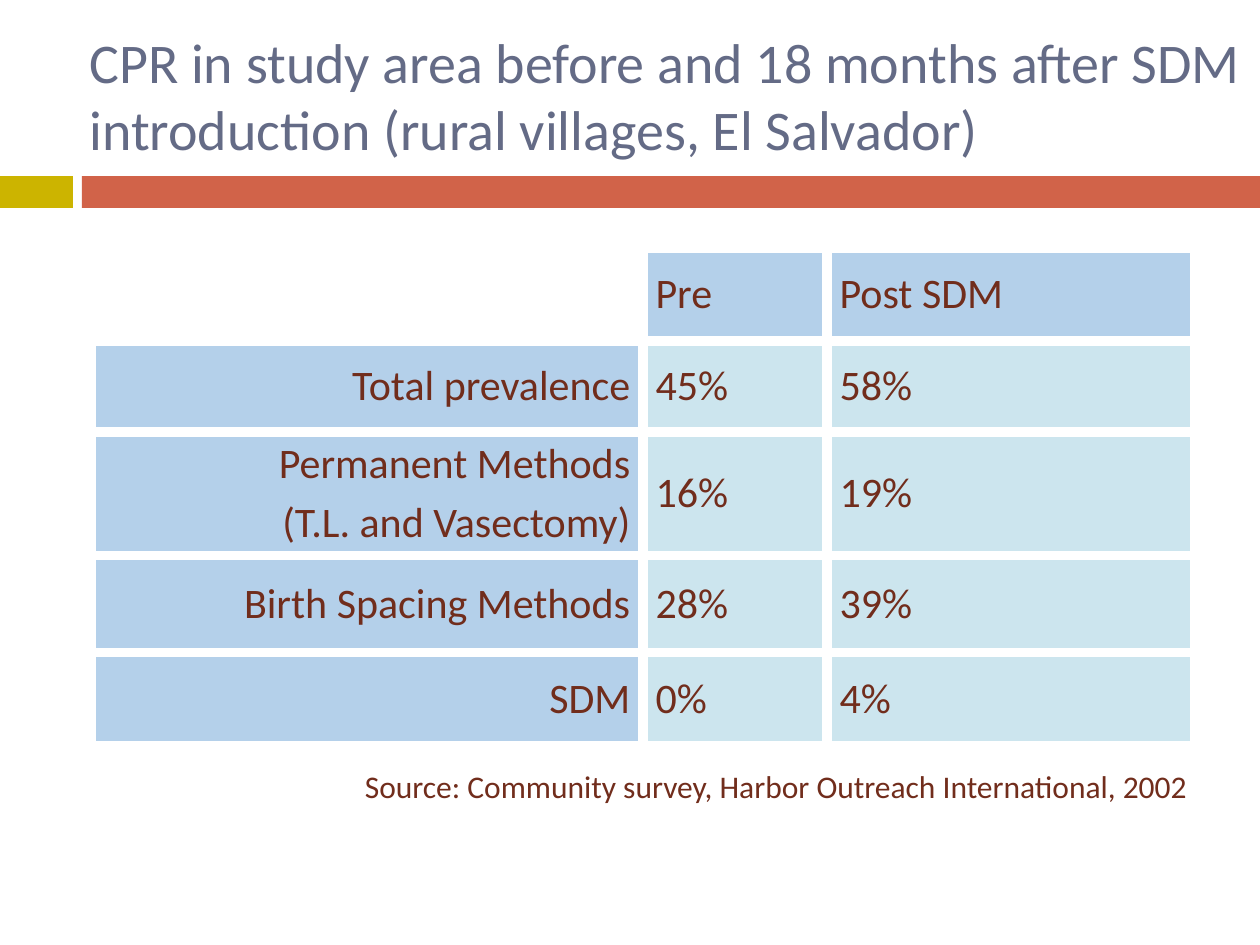
from dataclasses import dataclass

from lxml import etree
from pptx import Presentation
from pptx.dml.color import RGBColor
from pptx.enum.shapes import MSO_SHAPE
from pptx.enum.text import MSO_ANCHOR, PP_ALIGN
from pptx.oxml.ns import qn
from pptx.util import Emu, Pt

RECTANGLE = MSO_SHAPE.RECTANGLE
TOP, MIDDLE = MSO_ANCHOR.TOP, MSO_ANCHOR.MIDDLE
LEFT, RIGHT = PP_ALIGN.LEFT, PP_ALIGN.RIGHT

PX_PER_INCH = 126
FONT = "Calibri"
SLATE, BROWN, WHITE = "646B86", "712D1C", "FFFFFF"
GOLD, BRICK = "CCB400", "D16349"
HEADER_BLUE, VALUE_BLUE = "B4D0EA", "CCE5EE"
BORDER_POINTS = 6

COLUMN_WIDTHS = [552, 184, 368]
ROW_HEIGHTS = [93, 91, 91, 97, 93]
PREVALENCE = [
    ["", "Pre", "Post SDM"],
    ["Total prevalence", "45%", "58%"],
    ["Permanent Methods\n(T.L. and Vasectomy)", "16%", "19%"],
    ["Birth Spacing Methods", "28%", "39%"],
    ["SDM", "0%", "4%"],
]


@dataclass
class Area:
    left: int
    top: int
    width: int
    height: int

    def emu(self) -> list[Emu]:
        return [px(n) for n in (self.left, self.top, self.width, self.height)]


@dataclass
class Band:
    area: Area
    color: str


@dataclass
class Caption:
    area: Area
    text: str
    size: int
    color: str
    align: PP_ALIGN
    anchor: MSO_ANCHOR


BANDS = [
    Band(Area(0, 176, 73, 32), GOLD),
    Band(Area(82, 176, 1178, 32), BRICK),
]
CAPTIONS = [
    Caption(Area(77, 0, 1197, 189),
            "CPR in study area before and 18 months after SDM "
            "introduction (rural villages, El Salvador)",
            32, SLATE, LEFT, MIDDLE),
    Caption(Area(315, 761, 885, 50),
            "Source: Community survey, Harbor Outreach International, 2002",
            18, BROWN, RIGHT, TOP),
]


def px(length: int) -> Emu:
    return Emu(round(length * 914400 / PX_PER_INCH))


def rgb(color: str) -> RGBColor:
    return RGBColor.from_string(color)


def style_para(para, size: int, color: str, align: PP_ALIGN) -> None:
    para.alignment = align
    for span in para.runs:
        span.font.name = FONT
        span.font.size = Pt(size)
        span.font.color.rgb = rgb(color)


def draw_band(page, band: Band) -> None:
    box = page.shapes.add_shape(RECTANGLE, *band.area.emu())
    box.shadow.inherit = False
    box.fill.solid()
    box.fill.fore_color.rgb = rgb(band.color)
    box.line.fill.background()


def draw_caption(page, caption: Caption) -> None:
    frame = page.shapes.add_textbox(*caption.area.emu()).text_frame
    frame.word_wrap = True
    frame.vertical_anchor = caption.anchor
    frame.text = caption.text
    style_para(frame.paragraphs[0], caption.size, caption.color, caption.align)


def add_borders(cell) -> None:
    properties = cell._tc.get_or_add_tcPr()
    for side in ("lnL", "lnR", "lnT", "lnB"):
        line = etree.SubElement(properties, qn(f"a:{side}"), w=str(Pt(BORDER_POINTS)))
        fill = etree.SubElement(line, qn("a:solidFill"))
        etree.SubElement(fill, qn("a:srgbClr"), val=WHITE)


def fill_cell(cell, text: str, is_header: bool, align: PP_ALIGN) -> None:
    add_borders(cell)
    cell.vertical_anchor = MIDDLE
    if not text:
        cell.fill.background()
        return
    cell.fill.solid()
    cell.fill.fore_color.rgb = rgb(HEADER_BLUE if is_header else VALUE_BLUE)
    cell.text_frame.text = text
    for para in cell.text_frame.paragraphs:
        para.space_before = Pt(4.8)
        style_para(para, 24, BROWN, align)


def draw_table(page, left: int, top: int) -> None:
    area = Area(left, top, sum(COLUMN_WIDTHS), sum(ROW_HEIGHTS))
    table = page.shapes.add_table(
        len(ROW_HEIGHTS), len(COLUMN_WIDTHS), *area.emu()).table
    table.first_row = table.horz_banding = False
    for column, width in zip(table.columns, COLUMN_WIDTHS):
        column.width = px(width)
    for row, height in zip(table.rows, ROW_HEIGHTS):
        row.height = px(height)
    for r, values in enumerate(PREVALENCE):
        for c, text in enumerate(values):
            fill_cell(table.cell(r, c), text, r == 0 or c == 0,
                      RIGHT if c == 0 else LEFT)


def main() -> None:
    deck = Presentation()
    deck.slide_width, deck.slide_height = px(1260), px(945)
    page = deck.slides.add_slide(deck.slide_layouts[6])

    # Divider under the title
    for band in BANDS:
        draw_band(page, band)

    # Prevalence before and after
    draw_table(page, 91, 248)

    # Title and source
    for caption in CAPTIONS:
        draw_caption(page, caption)

    deck.save("out.pptx")


if __name__ == "__main__":
    main()
